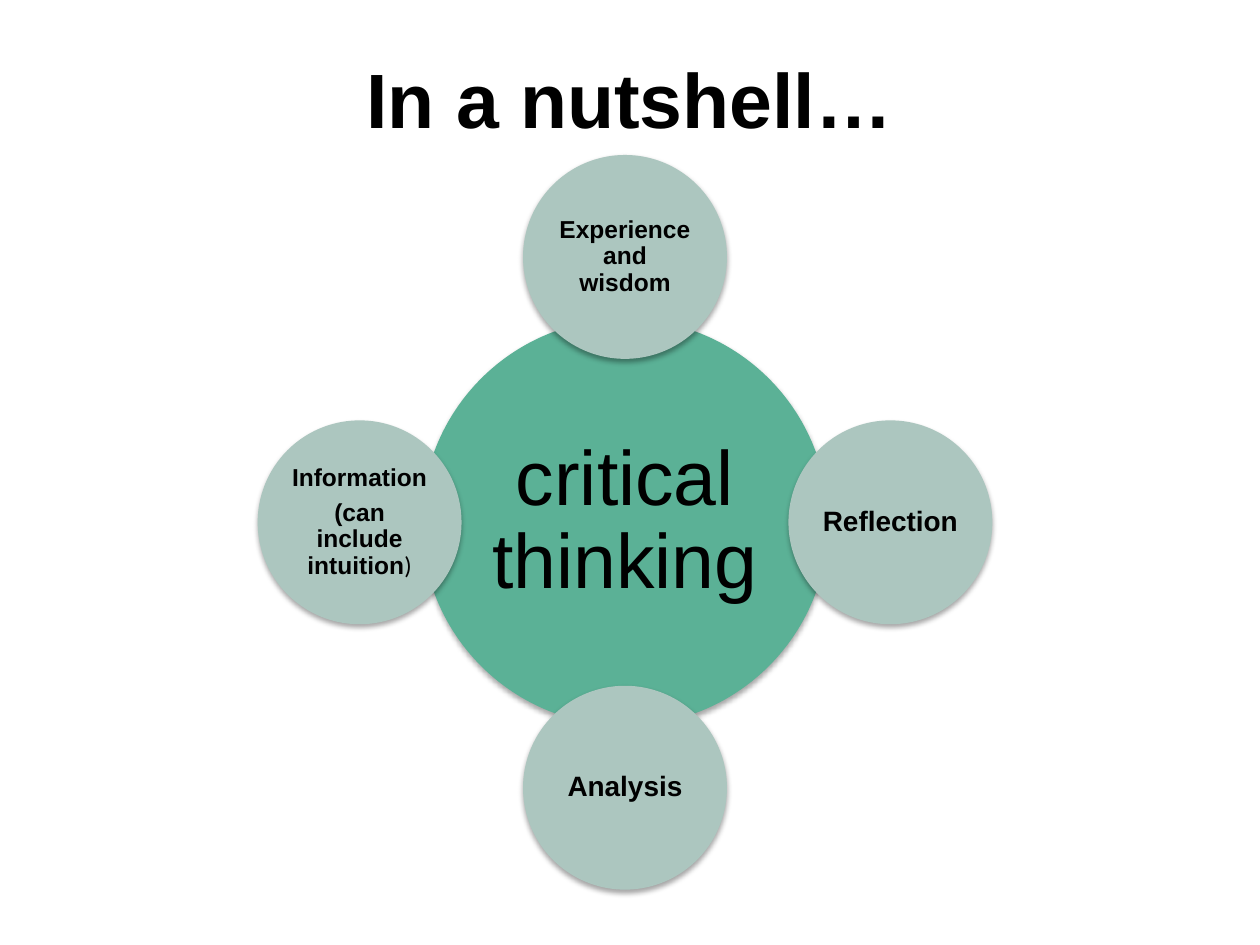
from dataclasses import dataclass

from lxml import etree
from pptx import Presentation
from pptx.dml.color import RGBColor
from pptx.enum.shapes import MSO_SHAPE
from pptx.enum.text import MSO_ANCHOR, PP_ALIGN
from pptx.oxml import parse_xml
from pptx.oxml.ns import nsdecls
from pptx.shapes.autoshape import Shape
from pptx.slide import Slide
from pptx.text.text import TextFrame
from pptx.util import Cm, Pt

OVAL = MSO_SHAPE.OVAL
MIDDLE = MSO_ANCHOR.MIDDLE
CENTER = PP_ALIGN.CENTER
COLORS = {"hub": "5BB196", "satellite": "ACC6BF", "text": "000000", "shadow": "000000"}
HUB_X, HUB_Y, ORBIT = 12.6, 10.53, 5.35
HUB_SIZE, SATELLITE_SIZE = 8.2, 4.11


@dataclass(frozen=True)
class Run:
    text: str
    size: int
    bold: bool = True
    font: str = "Arial"


@dataclass(frozen=True)
class Circle:
    dx: int
    dy: int
    paragraphs: tuple[tuple[Run, ...], ...]
    diameter: float = SATELLITE_SIZE
    color: str = "satellite"
    inset: float = 0.05


CIRCLES = (
    Circle(0, 0, ((Run("critical thinking", 44, False),),), HUB_SIZE, "hub", 0.15),
    Circle(0, -1, ((Run("Experience and wisdom", 14),),)),
    Circle(1, 0, ((Run("Reflection", 16),),)),
    Circle(0, 1, ((Run("Analysis", 16),),)),
    Circle(-1, 0, (
        (Run("Information", 14),),
        (Run("(can include intuition", 14), Run(")", 14, False, "Calibri")),
    )),
)


def write_text(tf: TextFrame, paragraphs: tuple[tuple[Run, ...], ...],
               line_spacing: float = 1.0, after: float = 0.0) -> None:
    tf.word_wrap = True
    tf.vertical_anchor = MIDDLE
    for i, runs in enumerate(paragraphs):
        p = tf.add_paragraph() if i else tf.paragraphs[0]
        p.alignment = CENTER
        p.line_spacing = line_spacing
        p.space_after = Pt(round(after * runs[0].size, 1))
        for run in runs:
            r = p.add_run()
            r.text = run.text
            r.font.name = run.font
            r.font.size = Pt(run.size)
            r.font.bold = run.bold
            r.font.color.rgb = RGBColor.from_string(COLORS["text"])


def add_shadow(sp: Shape) -> None:
    sp.shadow.inherit = False
    effects = sp._element.spPr.find("{*}effectLst")
    shadow = parse_xml(
        f'<a:outerShdw {nsdecls("a")} blurRad="{Pt(3.1)}" dist="{Pt(1.8)}" '
        'dir="5400000" rotWithShape="0"/>'
    )
    color = etree.SubElement(shadow, shadow.tag.replace("outerShdw", "srgbClr"),
                             val=COLORS["shadow"])
    etree.SubElement(color, shadow.tag.replace("outerShdw", "alpha"), val="35000")
    effects.append(shadow)


def add_circle(s: Slide, circle: Circle) -> None:
    d = circle.diameter
    left = HUB_X + circle.dx * ORBIT - d / 2
    top = HUB_Y + circle.dy * ORBIT - d / 2
    sp = s.shapes.add_shape(OVAL, Cm(left), Cm(top), Cm(d), Cm(d))
    sp.fill.solid()
    sp.fill.fore_color.rgb = RGBColor.from_string(COLORS[circle.color])
    sp.line.fill.background()
    add_shadow(sp)
    tf = sp.text_frame
    tf.margin_left = tf.margin_right = Cm(circle.inset)
    tf.margin_top = tf.margin_bottom = Cm(circle.inset)
    write_text(tf, circle.paragraphs, 0.9, 0.35)


def main() -> None:
    """Build the critical thinking slide."""
    prs = Presentation()
    prs.slide_width, prs.slide_height = Cm(25.4), Cm(19.05)
    s = prs.slides.add_slide(prs.slide_layouts[6])
    title = s.shapes.add_textbox(Cm(1.27), Cm(0), Cm(22.86), Cm(3.94))
    write_text(title.text_frame, ((Run("In a nutshell…", 44),),))
    for circle in CIRCLES:
        add_circle(s, circle)
    prs.save("out.pptx")


if __name__ == "__main__":
    main()
